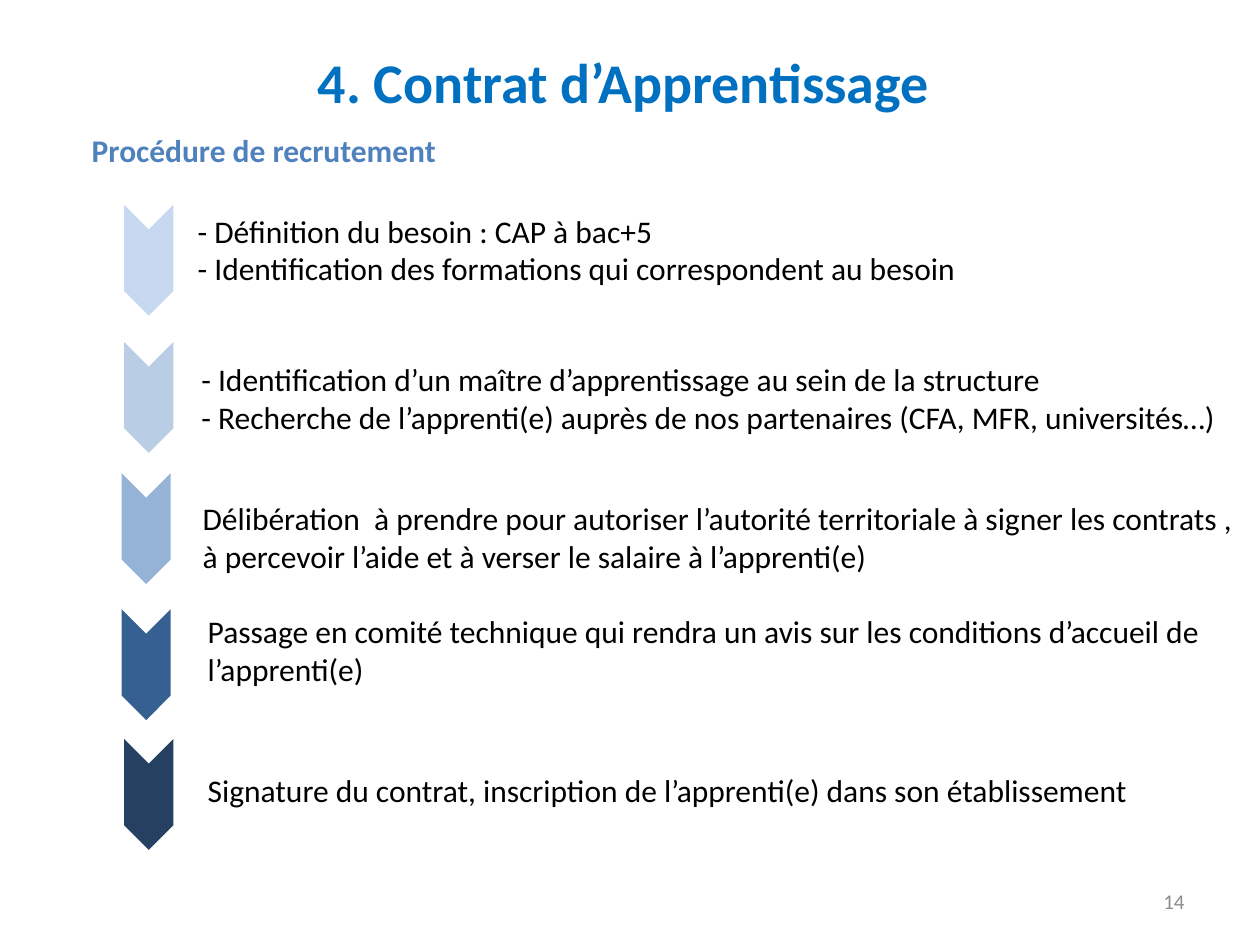
from pptx import Presentation
from pptx.dml.color import RGBColor
from pptx.enum.shapes import MSO_SHAPE
from pptx.enum.text import MSO_ANCHOR, PP_ALIGN
from pptx.util import Inches, Pt

TITLE_BLUE = RGBColor(0x00, 0x70, 0xC0)
HEADING_BLUE = RGBColor(0x4F, 0x81, 0xBD)
BLACK = RGBColor(0x00, 0x00, 0x00)
GREY = RGBColor(0x8C, 0x8C, 0x8C)
STEP_1 = RGBColor(0xC6, 0xD9, 0xF1)
STEP_2 = RGBColor(0xB9, 0xCD, 0xE5)
STEP_3 = RGBColor(0x95, 0xB3, 0xD7)
STEP_4 = RGBColor(0x37, 0x60, 0x92)
STEP_5 = RGBColor(0x25, 0x40, 0x61)

CHEVRON_LENGTH, CHEVRON_THICKNESS = 0.88, 0.39

STEPS = [
    (STEP_1, (0.74, 1.87), (1.47, 1.63, 7.05, 0.71),
     ["- Définition du besoin : CAP à bac+5",
      "- Identification des formations qui correspondent au besoin"]),
    (STEP_2, (0.74, 2.96), (1.5, 2.81, 8.5, 0.71),
     ["- Identification d’un maître d’apprentissage au sein de la structure",
      "- Recherche de l’apprenti(e) auprès de nos partenaires (CFA, MFR, universités…)"]),
    (STEP_3, (0.72, 4), (1.51, 3.91, 8.5, 0.71),
     ["Délibération  à prendre pour autoriser l’autorité territoriale à signer "
      "les contrats , à percevoir l’aide et à verser le salaire à l’apprenti(e)"]),
    (STEP_4, (0.72, 5.08), (1.55, 4.81, 8.18, 0.71),
     ["Passage en comité technique qui rendra un avis sur les conditions "
      "d’accueil de l’apprenti(e)"]),
    (STEP_5, (0.74, 6.11), (1.55, 6.07, 8.18, 0.4),
     ["Signature du contrat, inscription de l’apprenti(e) dans son établissement"]),
]


def add_text(s, box, lines, size=18, color=BLACK, bold=False,
             align=PP_ALIGN.LEFT, anchor=MSO_ANCHOR.TOP, indent=0):
    tf = s.shapes.add_textbox(*map(Inches, box)).text_frame
    tf.word_wrap = True
    tf.vertical_anchor = anchor
    for i, line in enumerate(lines):
        p = tf.add_paragraph() if i else tf.paragraphs[0]
        p.text = line
        p.alignment = align
        p.font.name = "Calibri"
        p.font.size = Pt(size)
        p.font.bold = bold
        p.font.color.rgb = color
        if indent:
            p._p.get_or_add_pPr().set("marL", str(Inches(indent)))


def add_header(s, title_box, heading_box):
    add_text(s, title_box, ["4. Contrat d’Apprentissage "], 32, TITLE_BLUE, True,
             PP_ALIGN.CENTER, MSO_ANCHOR.MIDDLE)
    add_text(s, heading_box, ["Procédure de recrutement"], 18, HEADING_BLUE, True,
             indent=0.28)


def add_step(s, color, chevron_at, text_box, lines):
    sp = s.shapes.add_shape(MSO_SHAPE.CHEVRON, *map(Inches, chevron_at),
                            Inches(CHEVRON_LENGTH), Inches(CHEVRON_THICKNESS))
    sp.rotation = 90
    sp.shadow.inherit = False
    sp.fill.solid()
    sp.fill.fore_color.rgb = color
    sp.line.fill.background()
    add_text(s, text_box, lines)


def add_page_number(s, box):
    add_text(s, box, ["14"], 12, GREY, False, PP_ALIGN.RIGHT, MSO_ANCHOR.MIDDLE)


def main():
    prs = Presentation()
    prs.slide_width, prs.slide_height = Inches(10), Inches(7.5)
    s = prs.slides.add_slide(prs.slide_layouts[6])
    add_header(s, (0.5, 0.3, 9, 0.69), (0.35, 0.99, 9, 0.55))
    for step in STEPS:
        add_step(s, *step)
    add_page_number(s, (7.17, 6.95, 2.33, 0.4))
    prs.save("out.pptx")


if __name__ == "__main__":
    main()
